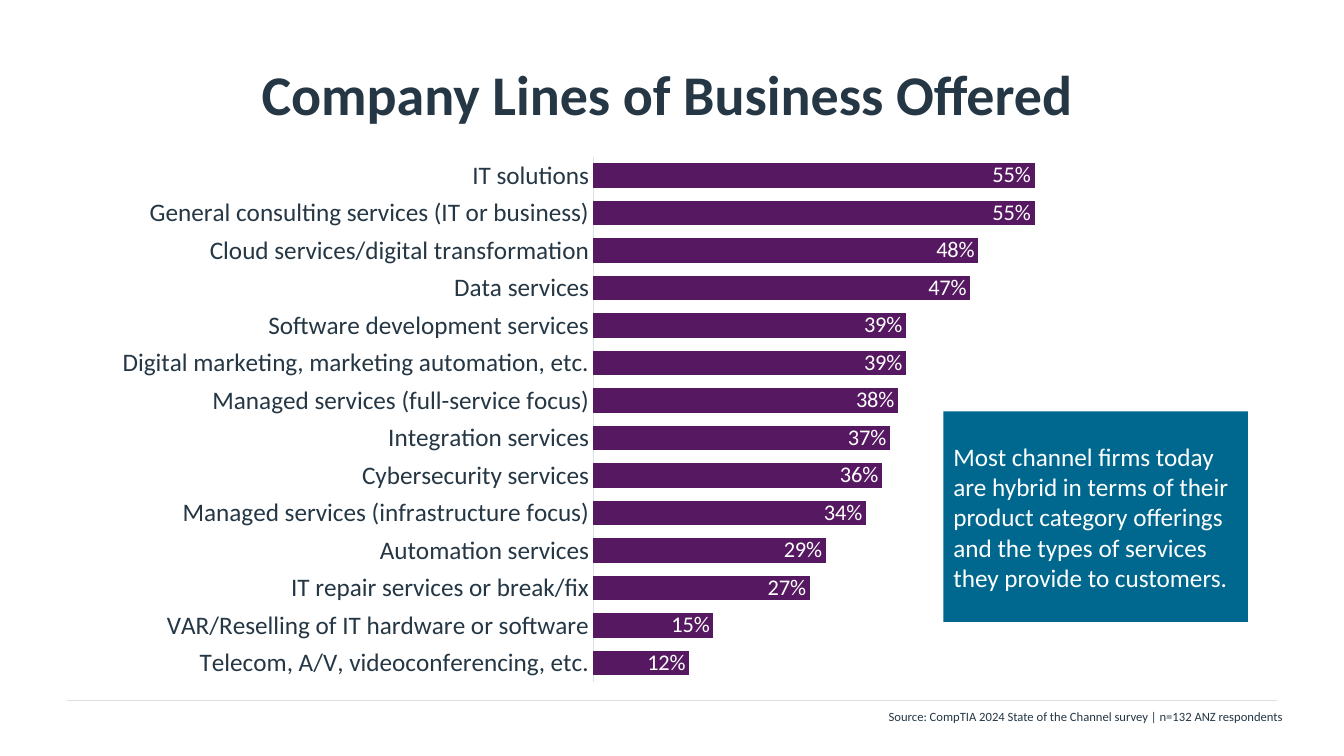
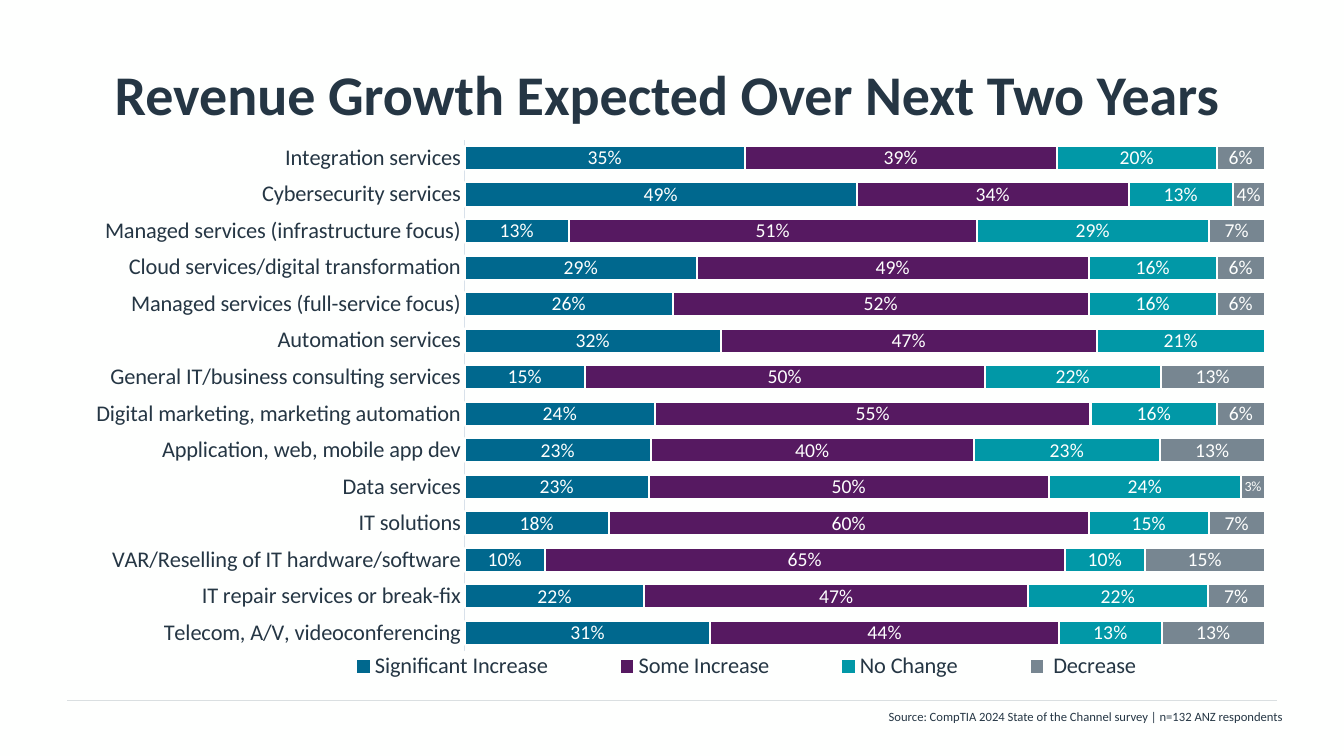
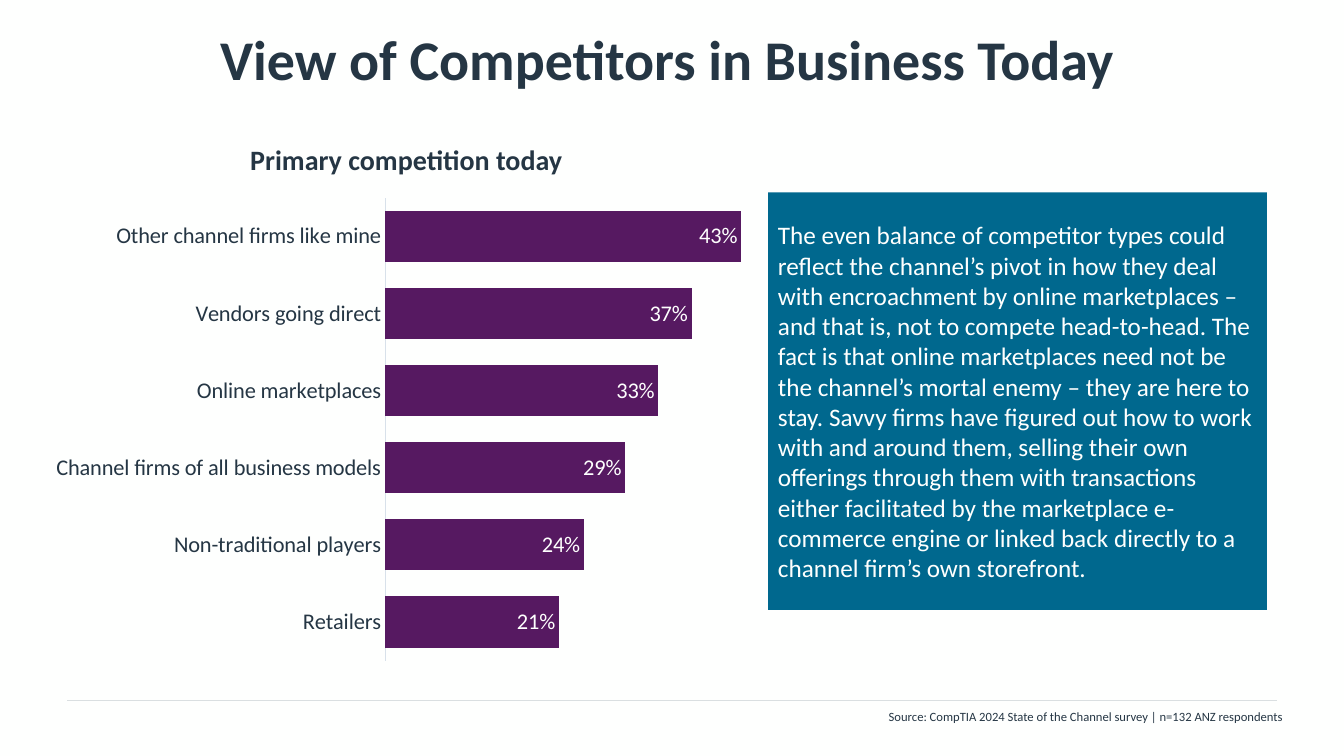
from dataclasses import dataclass

from lxml import etree
from pptx import Presentation
from pptx import util as u
from pptx.chart import data as chart_data
from pptx.dml import color
from pptx.enum import chart as chart_enum
from pptx.enum import shapes, text
from pptx.oxml import ns

FONT = "Calibri"
COLORS = {
    "paper": "FEFFFE",
    "ink": "253644",
    "rule": "DADFE1",
    "axis": "D8E1EA",
    "blue": "00688E",
    "purple": "561961",
    "teal": "0198A7",
    "gray": "778691",
}
SOURCE = "Source: CompTIA 2024 State of the Channel survey | n=132 ANZ respondents"


@dataclass(frozen=True)
class Box:
    left: float
    top: float
    width: float
    height: float

    def lengths(self) -> tuple:
        return tuple(u.Pt(n) for n in (self.left, self.top, self.width, self.height))


@dataclass(frozen=True)
class Series:
    name: str
    percents: tuple
    color: str


@dataclass(frozen=True)
class BarChart:
    box: Box
    plot: Box
    categories: tuple
    series: tuple
    maximum: float
    category_size: int
    label_size: int
    legend: Box | None = None


def rgb(name: str) -> color.RGBColor:
    return color.RGBColor.from_string(COLORS[name])


def set_font(font, size: float, color_name: str = "ink", bold: bool = False) -> None:
    font.name = FONT
    font.size = u.Pt(size)
    font.bold = bold
    font.color.rgb = rgb(color_name)


def add_heading(slide, words: str, box: Box, size: float) -> None:
    frame = slide.shapes.add_textbox(*box.lengths()).text_frame
    frame.word_wrap = True
    frame.margin_left = 0
    frame.vertical_anchor = text.MSO_ANCHOR.MIDDLE
    paragraph = frame.paragraphs[0]
    paragraph.text = words
    paragraph.alignment = text.PP_ALIGN.CENTER
    set_font(paragraph.font, size, bold=True)


def add_source(slide) -> None:
    frame = slide.shapes.add_textbox(*Box(455.8, 502.6, 467.3, 18).lengths()).text_frame
    frame.word_wrap = True
    frame.auto_size = text.MSO_AUTO_SIZE.SHAPE_TO_FIT_TEXT
    paragraph = frame.paragraphs[0]
    paragraph.text = SOURCE
    paragraph.alignment = text.PP_ALIGN.RIGHT
    set_font(paragraph.font, 9)


def add_rule(slide) -> None:
    rule = slide.shapes.add_connector(
        shapes.MSO_CONNECTOR.STRAIGHT, u.Pt(48), u.Pt(500.4), u.Pt(912), u.Pt(500.4)
    )
    rule.line.color.rgb = rgb("rule")
    rule.line.width = u.Pt(0.5)
    etree.SubElement(rule._element.spPr, ns.qn("a:effectLst"))


def add_slide(presentation, title: str, title_top: float = 21.6):
    slide = presentation.slides.add_slide(presentation.slide_layouts[6])
    slide.background.fill.solid()
    slide.background.fill.fore_color.rgb = rgb("paper")
    add_rule(slide)
    add_heading(slide, title, Box(48, title_top, 864, 90), 40)
    add_source(slide)
    return slide


def add_callout(slide, words: str, box: Box) -> None:
    shape = slide.shapes.add_shape(shapes.MSO_SHAPE.RECTANGLE, *box.lengths())
    shape.shadow.inherit = False
    shape.fill.solid()
    shape.fill.fore_color.rgb = rgb("blue")
    shape.line.fill.background()
    shape.text_frame.word_wrap = True
    shape.text_frame.vertical_anchor = text.MSO_ANCHOR.MIDDLE
    paragraph = shape.text_frame.paragraphs[0]
    paragraph.text = words
    paragraph.alignment = text.PP_ALIGN.LEFT
    paragraph.space_after = u.Pt(10)
    set_font(paragraph.font, 18, "paper")


def set_layout(element, share: Box, index: int, inner: bool) -> None:
    for old in element.findall(ns.qn("c:layout")):
        element.remove(old)
    layout = etree.Element(ns.qn("c:layout"))
    manual = etree.SubElement(layout, ns.qn("c:manualLayout"))
    values = {"layoutTarget": "inner"} if inner else {}
    values |= {"xMode": "edge", "yMode": "edge"}
    values |= {"x": share.left, "y": share.top, "w": share.width, "h": share.height}
    for tag, value in values.items():
        etree.SubElement(manual, ns.qn(f"c:{tag}")).set("val", str(value))
    element.insert(index, layout)


def add_bar_chart(slide, bars: BarChart):
    stacked = len(bars.series) > 1
    kinds = chart_enum.XL_CHART_TYPE
    positions = chart_enum.XL_LABEL_POSITION
    content = chart_data.CategoryChartData(number_format="0%")
    content.categories = bars.categories
    for series in bars.series:
        content.add_series(series.name, [percent / 100 for percent in series.percents])
    kind = kinds.BAR_STACKED_100 if stacked else kinds.BAR_CLUSTERED
    chart = slide.shapes.add_chart(kind, *bars.box.lengths(), content).chart
    set_font(chart.font, 10)
    chart.has_title = False
    chart.has_legend = bars.legend is not None
    if bars.legend:
        chart.legend.position = chart_enum.XL_LEGEND_POSITION.BOTTOM
        chart.legend.include_in_layout = False
        set_font(chart.legend.font, 16)
        set_layout(chart.legend._element, bars.legend, 1, False)

    axis = chart.category_axis
    axis.major_tick_mark = chart_enum.XL_TICK_MARK.NONE
    axis.has_major_gridlines = False
    axis.format.line.color.rgb = rgb("axis")
    axis.format.line.width = u.Pt(0.75)
    set_font(axis.tick_labels.font, bars.category_size)
    chart.value_axis.visible = False
    chart.value_axis.has_major_gridlines = False
    chart.value_axis.minimum_scale = 0
    chart.value_axis.maximum_scale = bars.maximum

    plot = chart.plots[0]
    plot.vary_by_categories = False
    plot.gap_width = 51
    if stacked:
        plot.overlap = 100
    for drawn, series in zip(plot.series, bars.series):
        drawn.format.fill.solid()
        drawn.format.fill.fore_color.rgb = rgb(series.color)
        drawn.invert_if_negative = False
        if stacked:
            drawn.format.line.color.rgb = rgb("paper")
            drawn.format.line.width = u.Pt(1.5)
        labels = drawn.data_labels
        labels.show_value = True
        labels.number_format = "0%"
        labels.number_format_is_linked = False
        labels.position = positions.CENTER if stacked else positions.INSIDE_END
        set_font(labels.font, bars.label_size, "paper")
    set_layout(chart._chartSpace.chart.plotArea, bars.plot, 0, True)
    return chart


def adjust_label(series, point: int, size: float) -> None:
    label = series.points[point].data_label
    set_font(label.font, size, "paper")
    label.position = chart_enum.XL_LABEL_POSITION.CENTER


def hide_label(series, point: int) -> None:
    labels = series._element.find(ns.qn("c:dLbls"))
    label = etree.Element(ns.qn("c:dLbl"))
    etree.SubElement(label, ns.qn("c:idx")).set("val", str(point))
    etree.SubElement(label, ns.qn("c:delete")).set("val", "1")
    labels.insert(len(labels.findall(ns.qn("c:dLbl"))), label)


BUSINESS_LINES = BarChart(
    box=Box(39.6, 111.6, 768.2, 375.8),
    plot=Box(0.5, 0, 0.5, 1),
    categories=(
        "Telecom, A/V, videoconferencing, etc.",
        "VAR/Reselling of IT hardware or software",
        "IT repair services or break/fix",
        "Automation services",
        "Managed services (infrastructure focus)",
        "Cybersecurity services",
        "Integration services",
        "Managed services (full-service focus)",
        "Digital marketing, marketing automation, etc.",
        "Software development services",
        "Data services",
        "Cloud services/digital transformation",
        "General consulting services (IT or business)",
        "IT solutions",
    ),
    series=(
        Series("Series 1", (12, 15, 27, 29, 34, 36, 37, 38, 39, 39, 47, 48, 55, 55), "purple"),
    ),
    maximum=0.67,
    category_size=18,
    label_size=16,
)

REVENUE_GROWTH = BarChart(
    box=Box(48.2, 99.4, 889.9, 392.4),
    plot=Box(0.319, 0, 0.655, 0.932),
    categories=(
        "Telecom, A/V, videoconferencing",
        "IT repair services or break-fix",
        "VAR/Reselling of IT hardware/software",
        "IT solutions",
        "Data services",
        "Application, web, mobile app dev",
        "Digital marketing, marketing automation",
        "General IT/business consulting services",
        "Automation services",
        "Managed services (full-service focus)",
        "Cloud services/digital transformation",
        "Managed services (infrastructure focus)",
        "Cybersecurity services",
        "Integration services",
    ),
    series=(
        Series(
            "Significant Increase",
            (31, 22, 10, 18, 23, 23, 24, 15, 32, 26, 29, 13, 49, 35),
            "blue",
        ),
        Series(
            "Some Increase",
            (44, 47, 65, 60, 50, 40, 55, 50, 47, 52, 49, 51, 34, 39),
            "purple",
        ),
        Series("No Change", (13, 22, 10, 15, 24, 23, 16, 22, 21, 16, 16, 29, 13, 20), "teal"),
        Series(" Decrease", (13, 7, 15, 7, 3, 13, 6, 13, 0, 6, 6, 7, 4, 6), "gray"),
    ),
    maximum=1.02,
    category_size=16,
    label_size=14,
    legend=Box(0.18, 0.93, 0.73, 0.06),
)

COMPETITORS = BarChart(
    box=Box(22.3, 141.1, 519.1, 347.8),
    plot=Box(0.487, 0, 0.513, 0.951),
    categories=(
        "Retailers",
        "Non-traditional players",
        "Channel firms of all business models",
        "Online marketplaces",
        "Vendors going direct",
        "Other channel firms like mine",
    ),
    series=(Series("Series 1", (21, 24, 29, 33, 37, 43), "purple"),),
    maximum=0.45,
    category_size=16,
    label_size=16,
)


def build_business_lines(presentation) -> None:
    slide = add_slide(presentation, "Company Lines of Business Offered")
    add_bar_chart(slide, BUSINESS_LINES)
    add_callout(
        slide,
        "Most channel firms today are hybrid in terms of their product category "
        "offerings and the types of services they provide to customers.",
        Box(673.9, 293.8, 217.4, 150.5),
    )


def build_revenue_growth(presentation) -> None:
    slide = add_slide(presentation, "Revenue Growth Expected Over Next Two Years")
    chart = add_bar_chart(slide, REVENUE_GROWTH)
    decrease = chart.plots[0].series[-1]
    adjust_label(decrease, REVENUE_GROWTH.categories.index("Data services"), 10)
    hide_label(decrease, REVENUE_GROWTH.categories.index("Automation services"))


def build_competitors(presentation) -> None:
    slide = add_slide(presentation, "View of Competitors in Business Today", -3.6)
    add_bar_chart(slide, COMPETITORS)
    add_heading(slide, "Primary competition today", Box(77.8, 69.1, 432, 90), 20)
    add_callout(
        slide,
        "The even balance of competitor types could reflect the channel’s pivot in how "
        "they deal with encroachment by online marketplaces – and that is, not to compete "
        "head-to-head. The fact is that online marketplaces need not be the channel’s "
        "mortal enemy – they are here to stay. Savvy firms have figured out how to work "
        "with and around them, selling their own offerings through them with transactions "
        "either facilitated by the marketplace e-commerce engine or linked back directly "
        "to a channel firm’s own storefront.",
        Box(548.6, 137.5, 356.4, 298.1),
    )


def main() -> None:
    presentation = Presentation()
    presentation.slide_width = u.Pt(960)
    presentation.slide_height = u.Pt(540)
    build_business_lines(presentation)
    build_revenue_growth(presentation)
    build_competitors(presentation)
    presentation.save("out.pptx")


if __name__ == "__main__":
    main()
